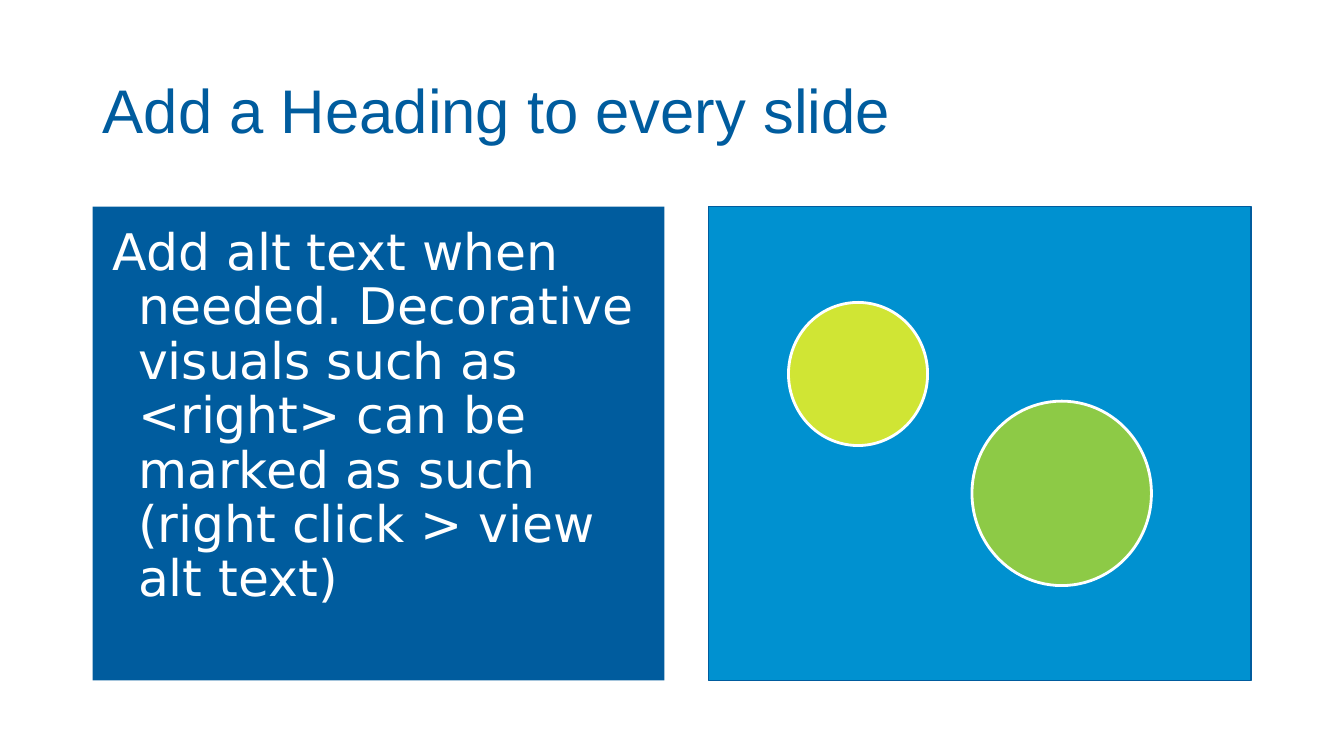
from pptx import Presentation
from pptx.dml.color import RGBColor as Rgb
from pptx.enum.shapes import MSO_SHAPE as Kind
from pptx.enum.text import MSO_ANCHOR as Anchor, PP_ALIGN as Align
from pptx.util import Inches, Pt

NAVY, BLUE, WHITE = "005C9E", "0091D0", "FFFFFF"
LIME, GREEN = "D0E534", "8DCA46"


def paint(part, color):
    """Give a fill a solid colour."""
    part.solid()
    part.fore_color.rgb = Rgb.from_string(color)


def write(para, text, size, face, color):
    """Add one styled run to a left-aligned paragraph."""
    para.alignment = Align.LEFT
    para.line_spacing = 0.9
    run = para.add_run()
    run.text = text
    run.font.size = Pt(size)
    run.font.name = face
    paint(run.font.fill, color)


def head(slide, text, box):
    """Place and fill the title."""
    title = slide.shapes.title
    title.left, title.top, title.width, title.height = map(Inches, box)
    frame = title.text_frame
    frame.word_wrap = True
    frame.vertical_anchor = Anchor.MIDDLE
    write(frame.paragraphs[0], text, 44, "Arial", NAVY)


def shape(slide, kind, box, fill, line=None, width=1):
    """Draw a flat shape with an optional outline."""
    item = slide.shapes.add_shape(kind, *map(Inches, box))
    item.shadow.inherit = False
    paint(item.fill, fill)
    if line:
        paint(item.line.fill, line)
        item.line.width = Pt(width)
    else:
        item.line.fill.background()
    return item


def note(slide, text, box):
    """Draw a filled panel with a hanging paragraph."""
    frame = shape(slide, Kind.RECTANGLE, box, NAVY).text_frame
    frame.word_wrap = True
    frame.vertical_anchor = Anchor.TOP
    frame.margin_left = frame.margin_right = Inches(0.2)
    frame.margin_top = frame.margin_bottom = Inches(0.2)
    para = frame.paragraphs[0]
    props = para._p.get_or_add_pPr()
    props.set("marL", str(Inches(0.25)))
    props.set("indent", str(Inches(-0.25)))
    write(para, text, 36, "DejaVu Sans", WHITE)


def main():
    """Build and save the slide."""
    deck = Presentation()
    deck.slide_width, deck.slide_height = Inches(13.33), Inches(7.5)
    slide = deck.slides.add_slide(deck.slide_layouts[5])
    head(slide, "Add a Heading to every slide", (0.92, 0.4, 11.5, 1.45))
    note(slide, "Add alt text when needed. Decorative visuals such as <right> "
         "can be marked as such (right click > view alt text)",
         (0.92, 2.05, 5.67, 4.7))
    shape(slide, Kind.RECTANGLE, (7.03, 2.05, 5.38, 4.7), BLUE, NAVY)
    shape(slide, Kind.OVAL, (7.82, 3, 1.38, 1.42), LIME, WHITE, 2)
    shape(slide, Kind.OVAL, (9.64, 3.98, 1.78, 1.83), GREEN, WHITE, 2)
    deck.save("out.pptx")


if __name__ == "__main__":
    main()
